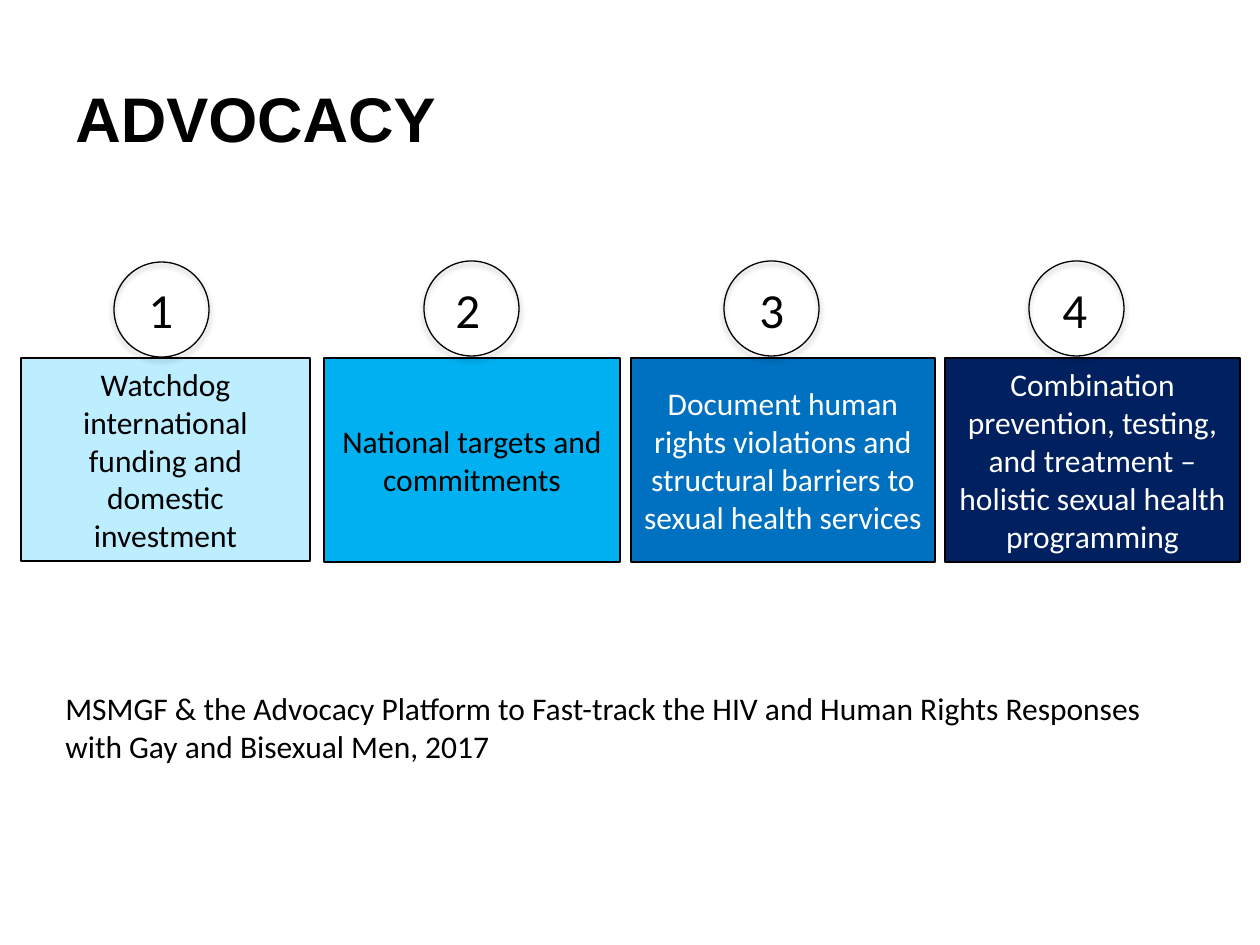
from lxml import etree
from pptx import Presentation
from pptx import util as u
from pptx.dml.color import RGBColor
from pptx.enum import shapes, text
from pptx.oxml import ns

PX_PER_INCH = 126
COLOURS = {
    "black": "000000",
    "white": "FFFFFF",
    "pale": "BDEEFF",
    "sky": "00B0F0",
    "blue": "0070C0",
    "navy": "002060",
}
# left, top, width, height, fill, text colour, wording
STEPS = [
    (21, 358, 289, 203, "pale", "black",
     "Watchdog international funding and domestic investment"),
    (324, 358, 296, 204, "sky", "black", "National targets and commitments"),
    (631, 358, 304, 204, "blue", "white",
     "Document human rights violations and structural barriers to sexual health services"),
    (945, 358, 295, 204, "navy", "white",
     "Combination prevention, testing, and treatment – holistic sexual health programming"),
]
CIRCLES = [(114, 262), (424, 261), (724, 261), (1029, 261)]
CIRCLE_SIZE = 95
NUMBER_TABS = [307, 611, 914]


def px(length):
    return u.Emu(round(length * 914400 / PX_PER_INCH))


def colour(name):
    return RGBColor.from_string(COLOURS[name])


class SlideBuilder:
    body_font = "Calibri"
    title_font = "Arial"
    line_width = u.Pt(0.75)

    def __init__(self, slide):
        self.slide = slide

    def set_text(self, shape, wording, size, ink="black", font=None, bold=False):
        frame = shape.text_frame
        frame.word_wrap = True
        frame.text = wording
        paragraph = frame.paragraphs[0]
        for run in paragraph.runs:
            run.font.name = font or self.body_font
            run.font.size = u.Pt(size)
            run.font.bold = bold
            run.font.color.rgb = colour(ink)
        return paragraph

    def text_box(self, box, wording, size, anchor=text.MSO_ANCHOR.TOP, **style):
        shape = self.slide.shapes.add_textbox(*map(px, box))
        shape.text_frame.vertical_anchor = anchor
        return self.set_text(shape, wording, size, **style)

    def outlined(self, kind, box):
        shape = self.slide.shapes.add_shape(kind, *map(px, box))
        shape.shadow.inherit = False
        shape.line.color.rgb = colour("black")
        shape.line.width = self.line_width
        return shape

    def step(self, box, fill, ink, wording):
        shape = self.outlined(shapes.MSO_SHAPE.RECTANGLE, box)
        shape.fill.solid()
        shape.fill.fore_color.rgb = colour(fill)
        shape.text_frame.vertical_anchor = text.MSO_ANCHOR.MIDDLE
        self.set_text(shape, wording, 18, ink).alignment = text.PP_ALIGN.CENTER

    def circle(self, left, top):
        shape = self.outlined(shapes.MSO_SHAPE.OVAL, (left, top, CIRCLE_SIZE, CIRCLE_SIZE))
        shape.fill.background()
        effects = shape._element.spPr.find(ns.qn("a:effectLst"))
        shadow = etree.SubElement(
            effects, ns.qn("a:outerShdw"), blurRad=str(int(u.Pt(3.1))),
            dist=str(int(u.Pt(1.8))), dir="5400000", rotWithShape="0")
        tint = etree.SubElement(shadow, ns.qn("a:srgbClr"), val=COLOURS["black"])
        etree.SubElement(tint, ns.qn("a:alpha"), val="35000")

    def numbers(self, box, tabs):
        """Number the circles in one line, a tab stop for each after the first."""
        wording = "\t".join(str(number) for number in range(1, len(tabs) + 2))
        paragraph = self.text_box(box, wording, 28)
        stops = etree.SubElement(paragraph._p.get_or_add_pPr(), ns.qn("a:tabLst"))
        for tab in tabs:
            etree.SubElement(stops, ns.qn("a:tab"), pos=str(int(px(tab))), algn="l")


def main():
    presentation = Presentation()
    presentation.slide_width = u.Inches(10)
    presentation.slide_height = u.Inches(7.5)
    builder = SlideBuilder(presentation.slides.add_slide(presentation.slide_layouts[6]))

    builder.text_box((63, 38, 1134, 158), "ADVOCACY", 36,
                     anchor=text.MSO_ANCHOR.MIDDLE, font=builder.title_font, bold=True)
    for *box, fill, ink, wording in STEPS:
        builder.step(box, fill, ink, wording)
    for left, top in CIRCLES:
        builder.circle(left, top)
    builder.numbers((136, 273, 1019, 72), NUMBER_TABS)
    builder.text_box(
        (53, 683, 1144, 89),
        "MSMGF & the Advocacy Platform to Fast-track the HIV and Human Rights Responses "
        "with Gay and Bisexual Men, 2017", 18)
    presentation.save("out.pptx")


if __name__ == "__main__":
    main()
